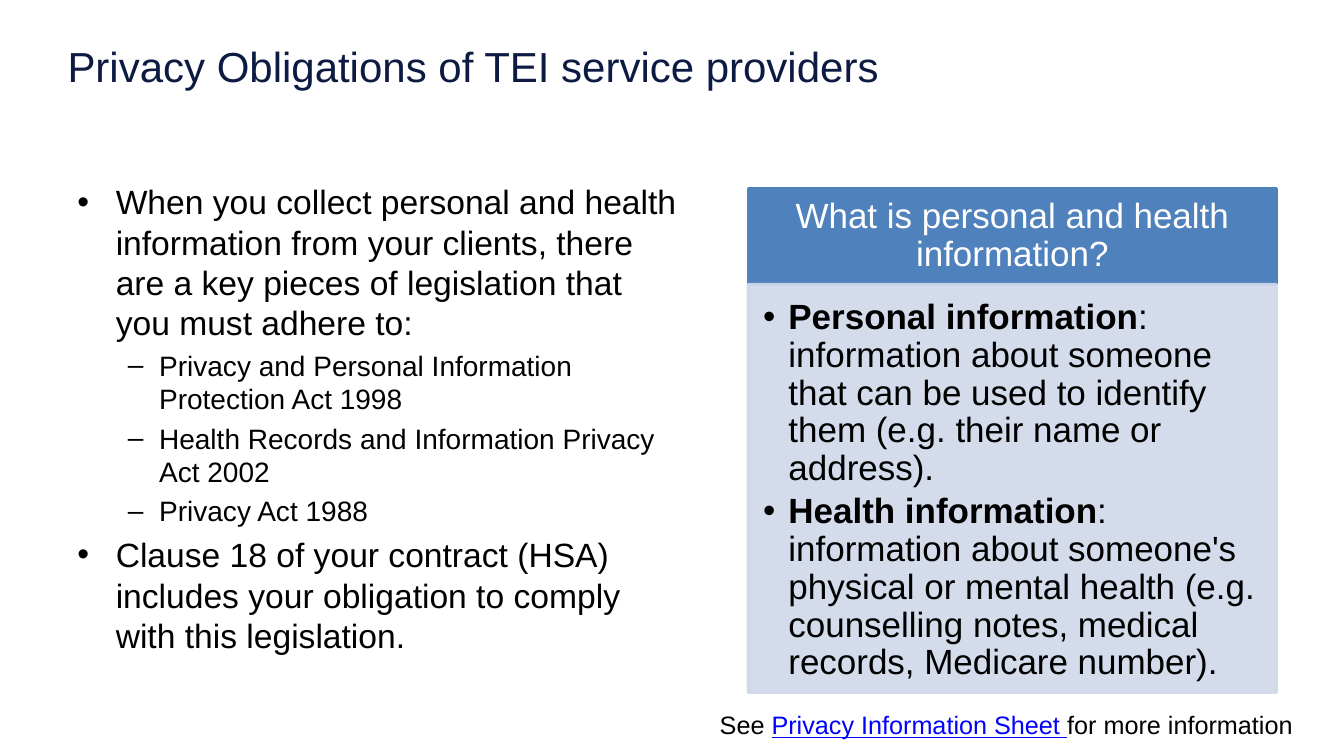
from lxml import etree
from pptx import Presentation, util as u
from pptx.dml.color import RGBColor
from pptx.enum import shapes, text
from pptx.oxml.ns import qn

EMU_PER_PX = 9144  # 100 px to the inch


def px(length):
    return u.Emu(length * EMU_PER_PX)


def colour(value):
    return RGBColor.from_string(value)


class SlideBuilder:
    FONT = "Arial"
    NAVY, BLACK, WHITE = "0D1B43", "000000", "FFFFFF"
    BLUE, PALE_BLUE, LINK = "4F81BD", "D0D8E8", "0000FF"

    def __init__(self, presentation):
        self.slide = presentation.slides.add_slide(presentation.slide_layouts[6])

    def text_box(self, box, paragraphs, insets=(10, 5, 10, 5)):
        shape = self.slide.shapes.add_textbox(*map(px, box))
        self.fill_text(shape, paragraphs, insets)

    def panel(self, box, fill, paragraphs, insets, anchor, alpha=None):
        shape = self.slide.shapes.add_shape(shapes.MSO_SHAPE.RECTANGLE, *map(px, box))
        shape.shadow.inherit = False
        shape.fill.solid()
        shape.line.width = u.Pt(2)
        for paint in (shape.fill.fore_color, shape.line.color):
            paint.rgb = colour(fill)
        if alpha:
            for element in list(shape._element.spPr.iter(qn("a:srgbClr"))):
                etree.SubElement(element, qn("a:alpha"), val=str(alpha * 1000))
        self.fill_text(shape, paragraphs, insets, anchor)

    def fill_text(self, shape, paragraphs, insets, anchor=text.MSO_ANCHOR.TOP):
        frame = shape.text_frame
        sides = ("margin_left", "margin_top", "margin_right", "margin_bottom")
        settings = dict(zip(sides, map(px, insets)))
        settings.update(word_wrap=True, vertical_anchor=anchor)
        for name, value in settings.items():
            setattr(frame, name, value)
        for index, (runs, style) in enumerate(paragraphs):
            paragraph = frame.add_paragraph() if index else frame.paragraphs[0]
            self.fill_paragraph(paragraph, runs, style, first=index == 0)

    def fill_paragraph(self, paragraph, runs, style, first):
        if "bullet" in style:
            mark, left, hanging = style["bullet"]
            properties = paragraph._p.get_or_add_pPr()
            properties.set("marL", str(px(left)))
            properties.set("indent", str(-px(hanging)))
            etree.SubElement(properties, qn("a:buFont"), typeface=self.FONT)
            etree.SubElement(properties, qn("a:buChar"), char=mark)
        formats = {"alignment": text.PP_ALIGN.LEFT, **style.get("format", {})}
        if first:
            formats.pop("space_before", None)
        for name, value in formats.items():
            setattr(paragraph, name, value)
        for words, changes in runs:
            run = paragraph.add_run()
            run.text = words
            font = {"name": self.FONT, "size": u.Pt(style["size"]), **changes}
            run.font.color.rgb = colour(font.pop("colour", style.get("colour", self.BLACK)))
            for name, value in font.items():
                setattr(run.font, name, value)


def main():
    presentation = Presentation()
    presentation.slide_width, presentation.slide_height = px(1333), px(750)
    builder = SlideBuilder(presentation)

    # Obligations list
    point = {"size": 24, "bullet": ("•", 38, 38), "format": {"space_before": u.Pt(4.8)}}
    act = {"size": 20, "bullet": ("–", 81, 31),
           "format": {"level": 1, "space_before": u.Pt(4)}}
    obligations = [
        ("When you collect personal and health information from your clients, "
         "there are a key pieces of legislation that you must adhere to:", point),
        ("Privacy and Personal Information Protection Act 1998", act),
        ("Health Records and Information Privacy Act 2002", act),
        ("Privacy Act 1988", act),
        ("Clause 18 of your contract (HSA) includes your obligation to comply "
         "with this legislation.", point),
    ]
    builder.text_box((67, 175, 620, 495),
                     [([(words, {})], style) for words, style in obligations])

    # Title
    builder.text_box((67, 40, 1200, 66),
                     [([("Privacy Obligations of TEI service providers", {})],
                       {"size": 30, "colour": builder.NAVY})], insets=(0, 0, 0, 0))

    # Definitions panel: heading above, body below
    left, top, width, heading_height = 742, 187, 524, 95
    heading = {"size": 25, "colour": builder.WHITE,
               "format": {"alignment": text.PP_ALIGN.CENTER, "line_spacing": 0.9}}
    builder.panel((left, top, width, heading_height), builder.BLUE,
                  [([("What is personal and health information?", {})], heading)],
                  (19, 11, 19, 11), text.MSO_ANCHOR.MIDDLE)

    definition = {"size": 25, "bullet": ("•", 25, 25),
                  "format": {"level": 1, "line_spacing": 0.9, "space_after": u.Pt(3.75)}}
    definitions = {
        "Personal information": ": information about someone that can be used to "
                                "identify them (e.g. their name or address).",
        "Health information": ": information about someone's physical or mental health "
                              "(e.g. counselling notes, medical records, Medicare number).",
    }
    builder.panel((left, top + heading_height, width, 405), builder.PALE_BLUE,
                  [([(term, {"bold": True}), (meaning, {"bold": False})], definition)
                   for term, meaning in definitions.items()],
                  (15, 15, 19, 22), text.MSO_ANCHOR.TOP, alpha=90)

    # Further reading
    builder.text_box((704, 699, 677, 40),
                     [([("See ", {}),
                        ("Privacy Information Sheet ",
                         {"colour": builder.LINK, "underline": True}),
                        ("for more information", {})], {"size": 18})])

    presentation.save("out.pptx")


if __name__ == "__main__":
    main()
